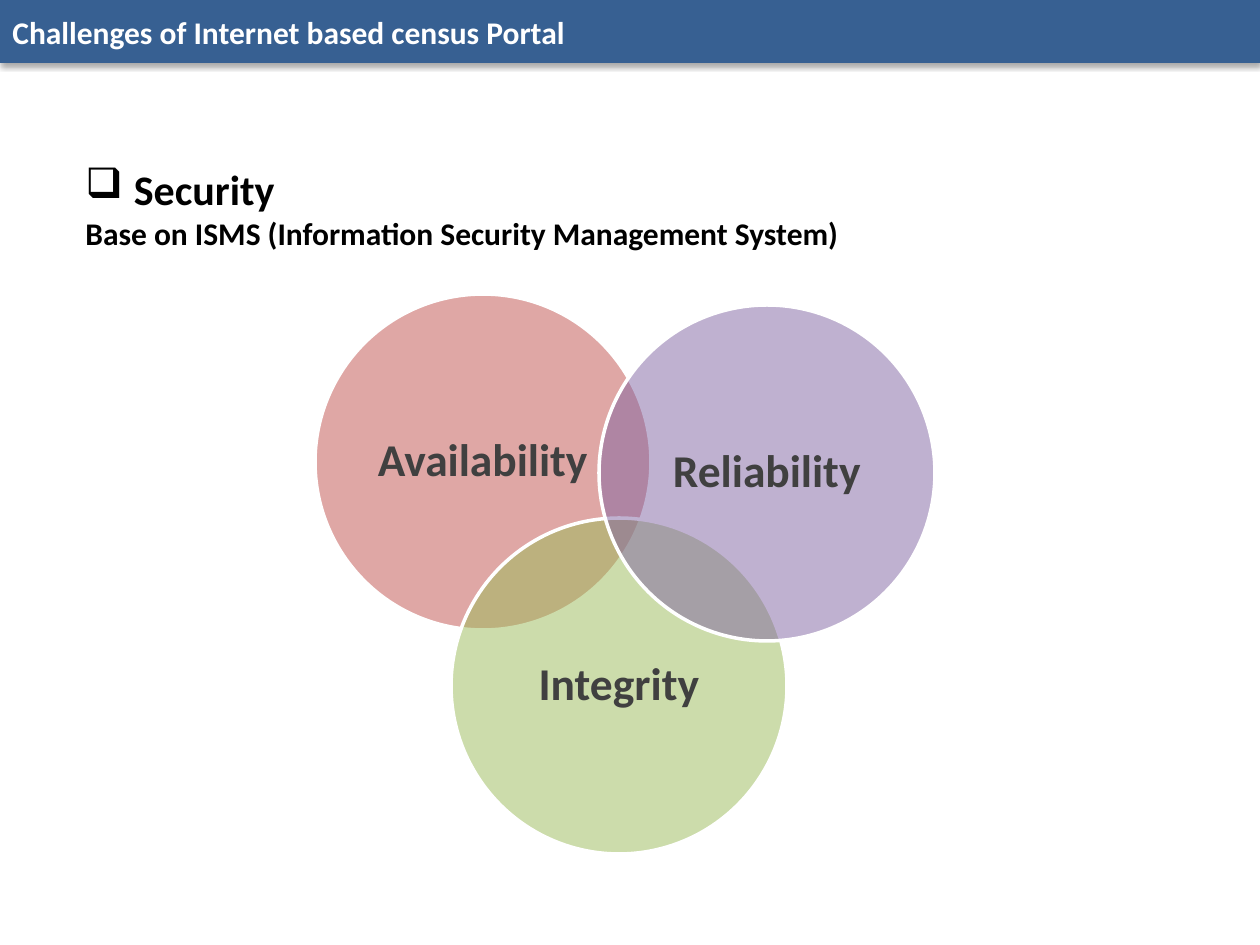
from lxml import etree
from pptx import Presentation
from pptx import util as u
from pptx.dml.color import RGBColor
from pptx.enum import shapes, text
from pptx.oxml.ns import qn

SCALE = 914400 / 126
WHITE = RGBColor(0xFF, 0xFF, 0xFF)
BLACK = RGBColor(0, 0, 0)
GREY = RGBColor(0x40, 0x40, 0x40)
BLUE = RGBColor(0x37, 0x60, 0x92)
RED = RGBColor(0xC0, 0x50, 0x4D)
GREEN = RGBColor(0x9B, 0xBB, 0x59)
PURPLE = RGBColor(0x80, 0x64, 0xA2)

SIZE = 336  # circle diameter
INNER = 238  # side of the square label area
RINGS = [
    ("Availability", 315, 294, RED),
    ("Integrity", 451, 518, GREEN),
    ("Reliability", 599, 305, PURPLE),
]


def px(n):
    return u.Emu(round(n * SCALE))


def add(parent, tag, **attrs):
    node = etree.SubElement(parent, qn(tag))
    for key, val in attrs.items():
        node.set(key, str(val))
    return node


def write(para, words, size, color, align=text.PP_ALIGN.LEFT):
    para.alignment = align
    run = para.add_run()
    run.text = words
    font = run.font
    font.name, font.size, font.bold = "Calibri", u.Pt(size), True
    font.color.rgb = color


def draw(slide, kind, box, fill):
    shape = slide.shapes.add_shape(kind, *map(px, box))
    shape.shadow.inherit = False
    shape.fill.solid()
    shape.fill.fore_color.rgb = fill
    shape.line.fill.background()
    return shape


def frame(slide, box):
    body = slide.shapes.add_textbox(*map(px, box)).text_frame
    body.word_wrap = True
    return body


def banner(slide, words):
    bar = draw(slide, shapes.MSO_SHAPE.RECTANGLE, (0, 0, 1260, 63), BLUE)
    glow = add(bar._element.spPr.find(qn("a:effectLst")), "a:outerShdw",
               blurRad=u.Pt(3.1), dist=u.Pt(1.8), dir=5400000, rotWithShape=0)
    add(add(glow, "a:srgbClr", val=BLACK), "a:alpha", val=35000)
    bar.text_frame.vertical_anchor = text.MSO_ANCHOR.MIDDLE
    write(bar.text_frame.paragraphs[0], words, 18, WHITE)


def heading(slide, head, detail):
    body = frame(slide, (73, 157, 1113, 102))
    body.auto_size = text.MSO_AUTO_SIZE.SHAPE_TO_FIT_TEXT
    top = body.paragraphs[0]
    write(top, head, 24, BLACK)
    props = top._p.get_or_add_pPr()
    props.set("marL", str(px(39)))
    props.set("indent", str(-px(39)))
    add(props, "a:buChar", char="❑")
    write(body.add_paragraph(), detail, 18, BLACK)


def ring(slide, words, left, top, color):
    """Half-transparent circle with its label in the middle."""
    disc = draw(slide, shapes.MSO_SHAPE.OVAL, (left, top, SIZE, SIZE), color)
    tint = disc._element.spPr.find(qn("a:solidFill"))[0]
    add(tint, "a:alpha", val=50000)
    disc.line.color.rgb = WHITE
    disc.line.width = u.Pt(2)

    gap = (SIZE - INNER) // 2
    body = frame(slide, (left + gap, top + gap, INNER, INNER))
    body.vertical_anchor = text.MSO_ANCHOR.MIDDLE
    body.margin_left = body.margin_right = px(6)
    body.margin_top = body.margin_bottom = px(14)
    para = body.paragraphs[0]
    para.line_spacing = 0.9
    write(para, words, 26, GREY, align=text.PP_ALIGN.CENTER)


def main():
    deck = Presentation()
    deck.slide_width, deck.slide_height = px(1260), px(945)
    slide = deck.slides.add_slide(deck.slide_layouts[6])
    heading(slide, " Security",
            "Base on ISMS (Information Security Management System)")
    banner(slide, "Challenges of Internet based census Portal")
    for item in RINGS:
        ring(slide, *item)
    deck.save("out.pptx")


if __name__ == "__main__":
    main()
